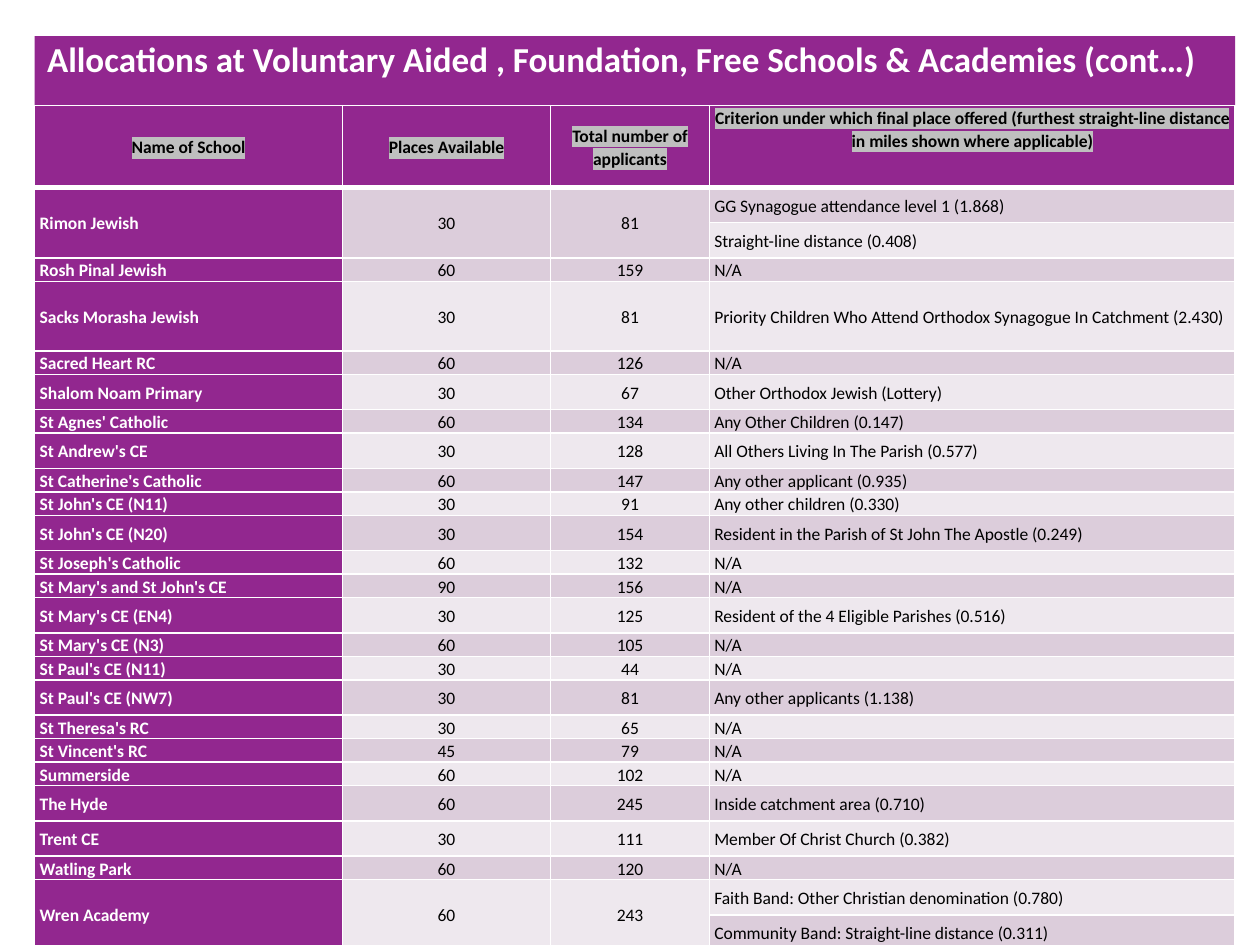
from lxml import etree
from pptx import Presentation
from pptx import util as u
from pptx.dml.color import RGBColor
from pptx.enum import text
from pptx.oxml import ns

COLOURS = {"purple": "92278F", "dark_band": "DCCDDB", "light_band": "EEE8EE",
           "white": "FFFFFF", "black": "000000", "grey": "BFBFBF"}
FONT = "Calibri"
LEFT, WIDTH = u.Cm(0.7), u.Cm(24.2)
COLUMNS = [6.2, 4.2, 3.2, 10.6]
HEIGHTS = {"header": 1.65, "short": 0.41, "medium": 0.71, "tall": 1.4}
CENTRE, START = text.PP_ALIGN.CENTER, text.PP_ALIGN.LEFT

HEADER = ("Name of School", "Places Available", "Total number of applicants",
          "Criterion under which final place offered (furthest straight-line "
          "distance in miles shown where applicable)")

# Row height, school, places, applicants, criterion; no school continues the one above
SCHOOLS = [
    ("medium", "Rimon Jewish", "30", "81", "GG Synagogue attendance level 1 (1.868)"),
    ("medium", "", "", "", "Straight-line distance (0.408)"),
    ("short", "Rosh Pinal Jewish", "60", "159", "N/A"),
    ("tall", "Sacks Morasha Jewish", "30", "81",
     "Priority Children Who Attend Orthodox Synagogue In Catchment (2.430)"),
    ("short", "Sacred Heart RC", "60", "126", "N/A"),
    ("medium", "Shalom Noam Primary", "30", "67", "Other Orthodox Jewish (Lottery)"),
    ("short", "St Agnes' Catholic", "60", "134", "Any Other Children (0.147)"),
    ("medium", "St Andrew's CE", "30", "128", "All Others Living In The Parish (0.577)"),
    ("short", "St Catherine's Catholic", "60", "147", "Any other applicant (0.935)"),
    ("short", "St John's CE (N11)", "30", "91", "Any other children (0.330)"),
    ("medium", "St John's CE (N20)", "30", "154",
     "Resident in the Parish of St John The Apostle (0.249)"),
    ("short", "St Joseph's Catholic", "60", "132", "N/A"),
    ("short", "St Mary's and St John's CE", "90", "156", "N/A"),
    ("medium", "St Mary's CE (EN4)", "30", "125", "Resident of the 4 Eligible Parishes (0.516)"),
    ("short", "St Mary's CE (N3)", "60", "105", "N/A"),
    ("short", "St Paul's CE (N11)", "30", "44", "N/A"),
    ("medium", "St Paul's CE (NW7)", "30", "81", "Any other applicants (1.138)"),
    ("short", "St Theresa's RC", "30", "65", "N/A"),
    ("short", "St Vincent's RC", "45", "79", "N/A"),
    ("short", "Summerside", "60", "102", "N/A"),
    ("medium", "The Hyde", "60", "245", "Inside catchment area (0.710)"),
    ("medium", "Trent CE", "30", "111", "Member Of Christ Church (0.382)"),
    ("short", "Watling Park", "60", "120", "N/A"),
    ("medium", "Wren Academy", "60", "243", "Faith Band: Other Christian denomination (0.780)"),
    ("medium", "", "", "", "Community Band: Straight-line distance (0.311)"),
]


def set_all(target, values):
    for name, value in values.items():
        setattr(target, name, value)


def paint(target, colour):
    target.fill.solid()
    target.fill.fore_color.rgb = RGBColor.from_string(COLOURS[colour])


def write(para, words, size, colour, bold, highlight=None):
    span = para.add_run()
    span.text = words
    set_all(span.font, {"size": u.Pt(size), "bold": bold, "name": FONT})
    span.font.color.rgb = RGBColor.from_string(COLOURS[colour])
    if highlight:
        mark = etree.Element(ns.qn("a:highlight"))
        etree.SubElement(mark, ns.qn("a:srgbClr"), val=COLOURS[highlight])
        span.font._element.find(ns.qn("a:solidFill")).addnext(mark)


def add_borders(cell, bottom):
    """White lines on each side, placed before the fill."""
    props = cell._tc.get_or_add_tcPr()
    sides = {"lnL": 1, "lnR": 1, "lnT": 1, "lnB": bottom}
    for place, (side, points) in enumerate(sides.items()):
        line = etree.Element(ns.qn(f"a:{side}"), w=str(u.Pt(points)))
        fill = etree.SubElement(line, ns.qn("a:solidFill"))
        etree.SubElement(fill, ns.qn("a:srgbClr"), val=COLOURS["white"])
        props.insert(place, line)


def fill_cell(cell, words, fill, align, colour="black", bold=False,
              highlight=None, anchor=text.MSO_ANCHOR.MIDDLE, bottom=1):
    set_all(cell, {"margin_left": u.Cm(0.1), "margin_right": u.Cm(0.1),
                   "margin_top": u.Cm(0.02), "margin_bottom": 0,
                   "vertical_anchor": anchor})
    paint(cell, fill)
    add_borders(cell, bottom)
    para = cell.text_frame.paragraphs[0]
    set_all(para, {"alignment": align, "line_spacing": 1.07, "space_after": u.Pt(8)})
    if words:
        write(para, words, 10, colour, bold, highlight)
    else:
        etree.SubElement(para._p, ns.qn("a:endParaRPr"), sz="1000")


def add_title(page):
    box = page.shapes.add_textbox(LEFT, u.Cm(0.73), WIDTH, u.Cm(1.4))
    paint(box, "purple")
    set_all(box.text_frame, {"word_wrap": True, "vertical_anchor": text.MSO_ANCHOR.TOP})
    para = box.text_frame.paragraphs[0]
    para.line_spacing = 0.9
    write(para, "Allocations at Voluntary Aided , Foundation, Free Schools & Academies (cont…)",
          20, "white", True)


def add_allocations(page):
    heights = [HEIGHTS["header"]] + [HEIGHTS[school[0]] for school in SCHOOLS]
    table = page.shapes.add_table(len(heights), len(COLUMNS), LEFT, u.Cm(2.13),
                                  WIDTH, u.Cm(sum(heights))).table
    table.horz_banding = False
    for column, width in zip(table.columns, COLUMNS):
        column.width = u.Cm(width)
    for row, height in zip(table.rows, heights):
        row.height = u.Cm(height)

    # Header row
    for col, words in enumerate(HEADER):
        anchor = text.MSO_ANCHOR.TOP if col == 3 else text.MSO_ANCHOR.MIDDLE
        fill_cell(table.cell(0, col), words, "purple", CENTRE, bold=True,
                  highlight="grey", anchor=anchor, bottom=3)

    # School rows in alternating bands
    for row, (_, school, *details) in enumerate(SCHOOLS, start=1):
        band = "dark_band" if row % 2 else "light_band"
        fill_cell(table.cell(row, 0), school, "purple", START, "white", True)
        for col, words in enumerate(details, start=1):
            fill_cell(table.cell(row, col), words, band, START if col == 3 else CENTRE)
        if not school:
            for col in range(3):
                table.cell(row - 1, col).merge(table.cell(row, col))


def main():
    deck = Presentation()
    set_all(deck, {"slide_width": u.Cm(25.4), "slide_height": u.Cm(19.05)})
    page = deck.slides.add_slide(deck.slide_layouts[6])
    add_title(page)
    add_allocations(page)
    deck.save("out.pptx")


if __name__ == "__main__":
    main()
